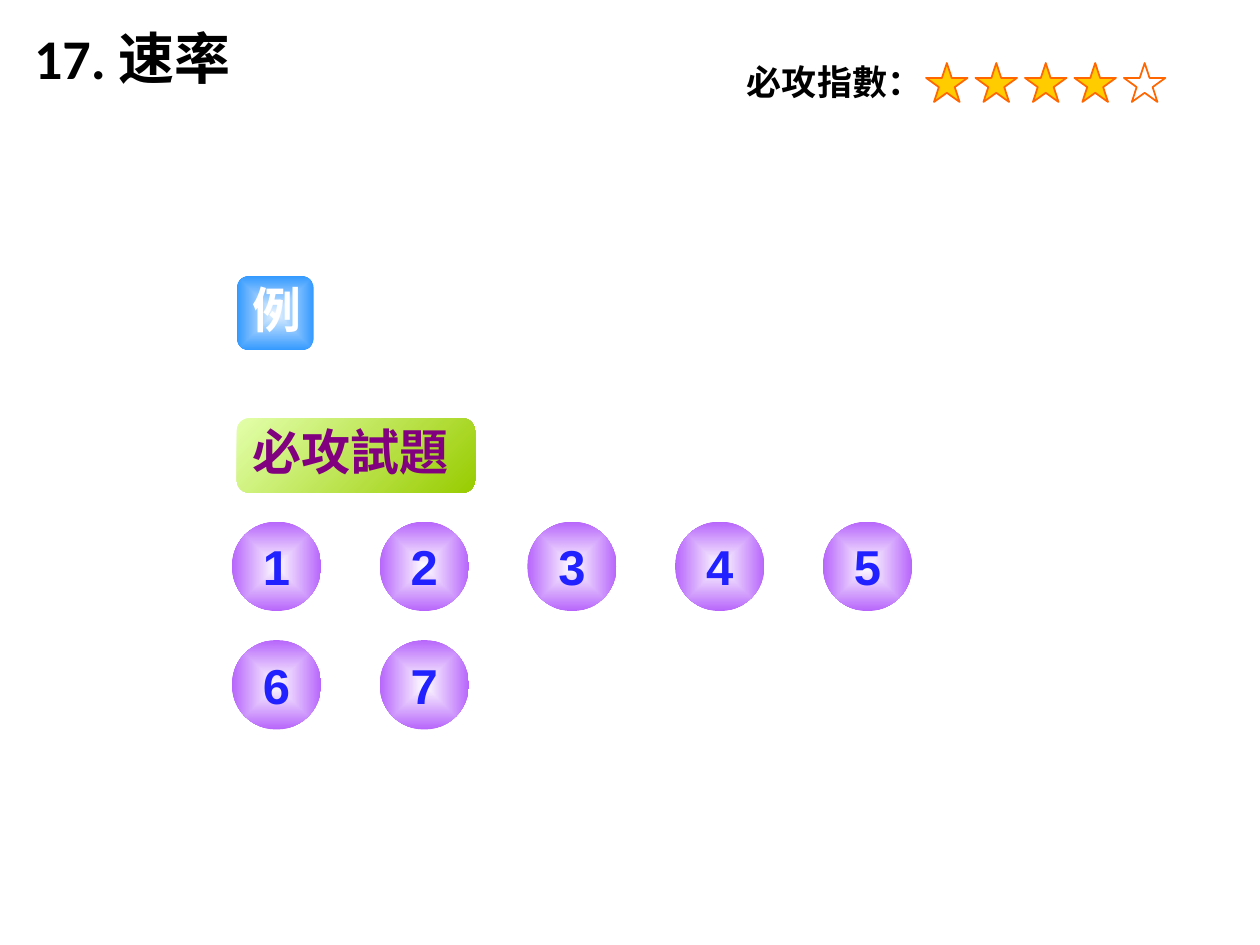
from lxml import etree
from pptx import Presentation
from pptx.dml.color import RGBColor
from pptx.enum.shapes import MSO_SHAPE
from pptx.enum.text import MSO_ANCHOR, PP_ALIGN
from pptx.oxml.ns import qn
from pptx.util import Inches, Pt

STAR = MSO_SHAPE.STAR_5_POINT
OVAL = MSO_SHAPE.OVAL
ROUNDED = MSO_SHAPE.ROUNDED_RECTANGLE
TOP, MIDDLE = MSO_ANCHOR.TOP, MSO_ANCHOR.MIDDLE
LEFT, CENTER = PP_ALIGN.LEFT, PP_ALIGN.CENTER

LATIN_TITLE = "Calibri"
HAN_TITLE = "Noto Sans CJK TC"
HAN_LABEL = "Noto Sans CJK SC"

STAR_COUNT, STARS_FILLED = 5, 4
FIRST_STAR, LAST_STAR = 7.35, 8.92
QUESTION_COUNT, PER_ROW = 7, 5
FIRST_COLUMN, LAST_COLUMN = 1.84, 6.53
FIRST_ROW, ROW_STEP = 4.14, 0.94


def color(hex_value):
    return RGBColor.from_string(hex_value)


def spread(first, last, count, index):
    """Position of one of count equally spaced items."""
    return first + (last - first) * index / (count - 1)


def box(left, top, width, height):
    return Inches(left), Inches(top), Inches(width), Inches(height)


def style_font(font, properties, name, size, hex_value):
    """Format a font, naming it for East Asian text as well."""
    font.name = name
    font.size = Pt(size)
    font.bold = True
    font.color.rgb = color(hex_value)
    east_asian = etree.Element(qn("a:ea"), typeface=name)
    properties.find(qn("a:latin")).addnext(east_asian)


def style_paragraph(paragraph, name, size, hex_value):
    properties = paragraph._p.get_or_add_pPr().get_or_add_defRPr()
    style_font(paragraph.font, properties, name, size, hex_value)


def fill_gradient(shape, start, end, angle=None):
    """Fill linearly at the angle, or outwards from the centre without one."""
    shape.fill.gradient()
    for stop, hex_value in zip(shape.fill.gradient_stops, (start, end)):
        stop.color.rgb = color(hex_value)
    if angle is not None:
        shape.fill.gradient_angle = angle
        return
    linear = shape._element.spPr.find(qn("a:gradFill")).find(qn("a:lin"))
    path = etree.Element(qn("a:path"), path="shape")
    etree.SubElement(path, qn("a:fillToRect"),
                     l="50000", t="50000", r="50000", b="50000")
    linear.getparent().replace(linear, path)


def add_title(slide):
    title = slide.shapes.title
    title.left, title.top, title.width, title.height = box(0.17, 0.14, 6.56, 0.82)
    title.text_frame.vertical_anchor = TOP
    paragraph = title.text_frame.paragraphs[0]
    paragraph.alignment = LEFT
    for text, name in (("17. ", LATIN_TITLE), ("速率", HAN_TITLE)):
        run = paragraph.add_run()
        run.text = text
        style_font(run.font, run._r.get_or_add_rPr(), name, 32, "000000")


def add_rating(slide):
    caption = slide.shapes.add_textbox(*box(5.83, 0.43, 1.89, 0.46))
    caption.text_frame.word_wrap = True
    paragraph = caption.text_frame.paragraphs[0]
    paragraph.text = "必攻指數："
    style_paragraph(paragraph, HAN_TITLE, 20, "000000")
    for index in range(STAR_COUNT):
        left = spread(FIRST_STAR, LAST_STAR, STAR_COUNT, index)
        star = slide.shapes.add_shape(STAR, *box(left, 0.5, 0.33, 0.31))
        star.shadow.inherit = False
        star.fill.solid()
        star.fill.fore_color.rgb = color("FFCC00" if index < STARS_FILLED else "FFFFFF")
        star.line.color.rgb = color("FF6600")
        star.line.width = Pt(1)


def add_button(slide, kind, bounds, text, gradient, name, text_color,
               anchor=MIDDLE, align=CENTER, wrap=False):
    button = slide.shapes.add_shape(kind, *box(*bounds))
    button.shadow.inherit = False
    button.line.fill.background()
    fill_gradient(button, *gradient)
    frame = button.text_frame
    frame.word_wrap = wrap
    frame.vertical_anchor = anchor
    paragraph = frame.paragraphs[0]
    paragraph.text = text
    paragraph.alignment = align
    style_paragraph(paragraph, name, 28, text_color)
    return paragraph


def add_heading(slide, bounds, text, gradient, text_color, align):
    paragraph = add_button(slide, ROUNDED, bounds, text, gradient, HAN_LABEL,
                           text_color, TOP, align, True)
    paragraph.line_spacing = Pt(30)


def add_questions(slide):
    for index in range(QUESTION_COUNT):
        row, column = divmod(index, PER_ROW)
        left = spread(FIRST_COLUMN, LAST_COLUMN, PER_ROW, column)
        bounds = (left, FIRST_ROW + row * ROW_STEP, 0.71, 0.71)
        add_button(slide, OVAL, bounds, str(index + 1), ("FFFFFF", "B765FB"),
                   "Arial", "2121FF")


def main():
    presentation = Presentation()
    presentation.slide_width, presentation.slide_height = Inches(10), Inches(7.5)
    slide = presentation.slides.add_slide(presentation.slide_layouts[5])
    add_title(slide)
    add_rating(slide)
    add_heading(slide, (1.88, 2.19, 0.61, 0.59), "例",
                ("E5F2FF", "3399FF"), "FFFFFF", CENTER)
    add_heading(slide, (1.88, 3.32, 1.89, 0.59), "必攻試題",
                ("E3FFAB", "99CC00", 315), "800080", LEFT)
    add_questions(slide)
    presentation.save("out.pptx")


if __name__ == "__main__":
    main()
